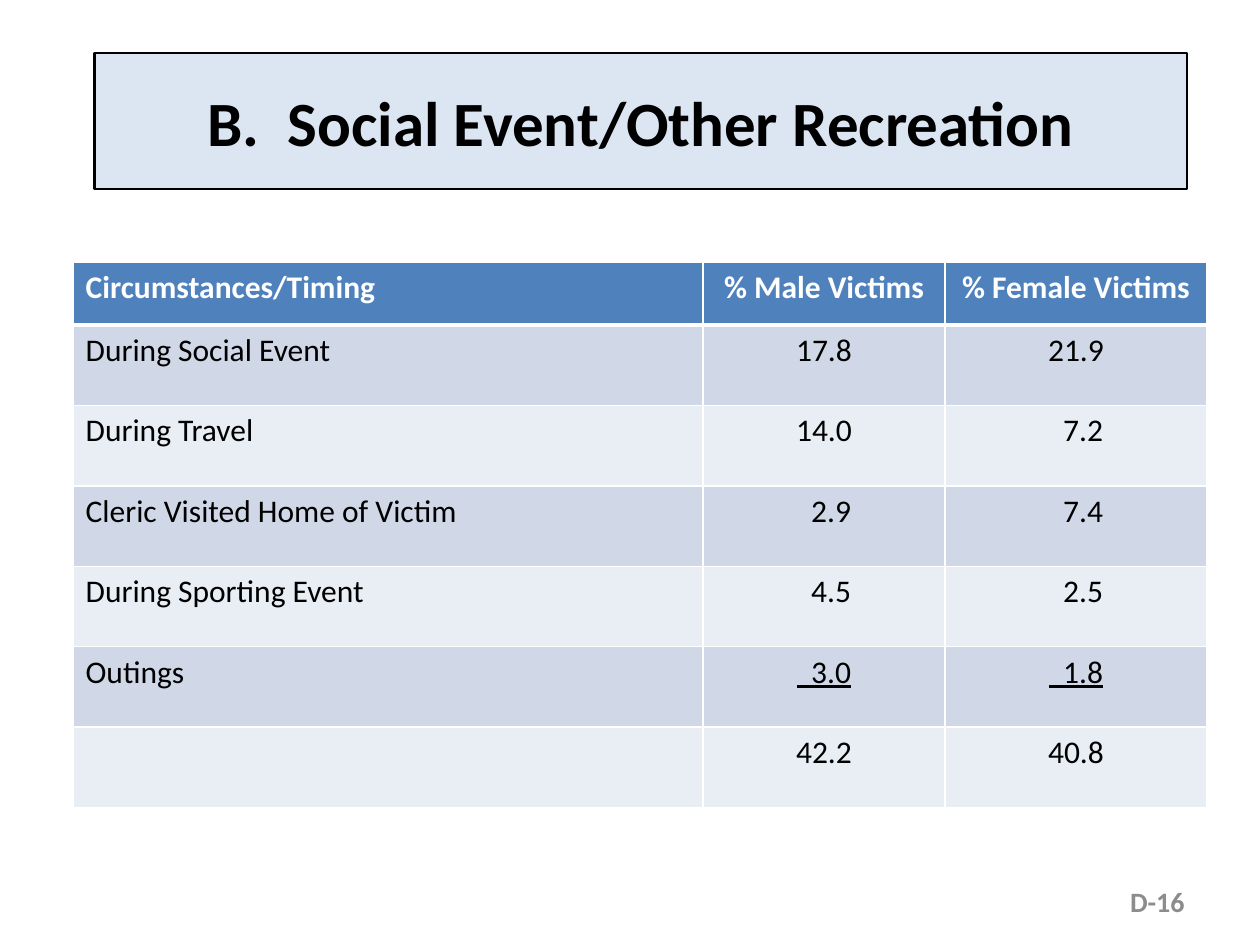
import pptx
import pptx.dml.color
import pptx.enum.text
import pptx.oxml
import pptx.oxml.ns
import pptx.util
from pptx.util import Inches

FONT = "Calibri"
COLORS = {
    "black": "000000",
    "white": "FFFFFF",
    "title": "DCE6F2",
    "header": "4F81BD",
    "odd": "D0D8E8",
    "even": "E9EDF4",
    "number": "8C8C8C",
}
ALIGN = pptx.enum.text.PP_ALIGN
MIDDLE = pptx.enum.text.MSO_ANCHOR.MIDDLE

HEADER = ("Circumstances/Timing", "% Male Victims", "% Female Victims")
# Leading spaces belong to the figures: the underline of the last addends spans them
ROWS = [
    ("During Social Event", "17.8", "21.9"),
    ("During Travel", "14.0", "  7.2"),
    ("Cleric Visited Home of Victim", "  2.9", "  7.4"),
    ("During Sporting Event", "  4.5", "  2.5"),
    ("Outings", "  3.0", "  1.8"),
    ("", "42.2", "40.8"),
]
LAST_ADDEND = 5
COLUMN_WIDTHS = (5, 1.92, 2.08)
HEADER_HEIGHT = 0.5


def rgb(name):
    return pptx.dml.color.RGBColor.from_string(COLORS[name])


def add_text(frame, text, size, color, align, bold=False, underline=None):
    para = frame.paragraphs[0]
    para.alignment = align
    span = para.add_run()
    span.text = text
    span.font.name = FONT
    span.font.size = pptx.util.Pt(size)
    span.font.bold = bold
    span.font.underline = underline
    span.font.color.rgb = rgb(color)


def set_borders(cell, top, bottom):
    """Draw white cell borders; widths are in points."""
    properties = cell._tc.get_or_add_tcPr()
    for side, width in (("L", 1), ("R", 1), ("T", top), ("B", bottom)):
        properties.append(pptx.oxml.parse_xml(
            f'<a:ln{side} {pptx.oxml.ns.nsdecls("a")} w="{pptx.util.Pt(width)}">'
            f'<a:solidFill><a:srgbClr val="{COLORS["white"]}"/></a:solidFill>'
            f'</a:ln{side}>'))


def add_title(page, left, top, width, height):
    title = page.shapes.title
    title.left, title.top, title.width, title.height = left, top, width, height
    title.fill.solid()
    title.fill.fore_color.rgb = rgb("title")
    title.line.color.rgb = rgb("black")
    title.line.width = pptx.util.Pt(1.5)
    title.text_frame.vertical_anchor = MIDDLE
    add_text(title.text_frame, "B.  Social Event/Other Recreation", 36, "black",
             ALIGN.CENTER, bold=True)


def add_victim_table(page, left, top, width, height):
    table = page.shapes.add_table(len(ROWS) + 1, len(HEADER),
                                  left, top, width, height).table
    for column, column_width in zip(table.columns, COLUMN_WIDTHS):
        column.width = Inches(column_width)
    body_height = (height - Inches(HEADER_HEIGHT)) // len(ROWS)

    for r, texts in enumerate([HEADER] + ROWS):
        is_header = r == 0
        table.rows[r].height = Inches(HEADER_HEIGHT) if is_header else body_height
        fill = "header" if is_header else ("odd" if r % 2 else "even")
        for c, text in enumerate(texts):
            cell = table.cell(r, c)
            set_borders(cell, top=3 if r == 1 else 1, bottom=3 if is_header else 1)
            cell.fill.solid()
            cell.fill.fore_color.rgb = rgb(fill)
            if text:
                add_text(cell.text_frame, text, 18,
                         "white" if is_header else "black",
                         ALIGN.CENTER if c else ALIGN.LEFT, bold=is_header,
                         underline=True if r == LAST_ADDEND and c else None)


def add_page_number(page, left, top, width, height):
    box = page.shapes.add_textbox(left, top, width, height)
    box.text_frame.word_wrap = True
    box.text_frame.vertical_anchor = MIDDLE
    add_text(box.text_frame, "D-16", 16, "number", ALIGN.RIGHT, bold=True)


def main():
    deck = pptx.Presentation()
    deck.slide_width, deck.slide_height = Inches(10), Inches(7.5)
    page = deck.slides.add_slide(deck.slide_layouts[5])  # title only

    add_title(page, Inches(0.75), Inches(0.42), Inches(8.67), Inches(1.08))
    add_victim_table(page, Inches(0.58), Inches(2.08), Inches(9), Inches(4.33))
    add_page_number(page, Inches(7.17), Inches(6.95), Inches(2.33), Inches(0.4))

    deck.save("out.pptx")


if __name__ == "__main__":
    main()
